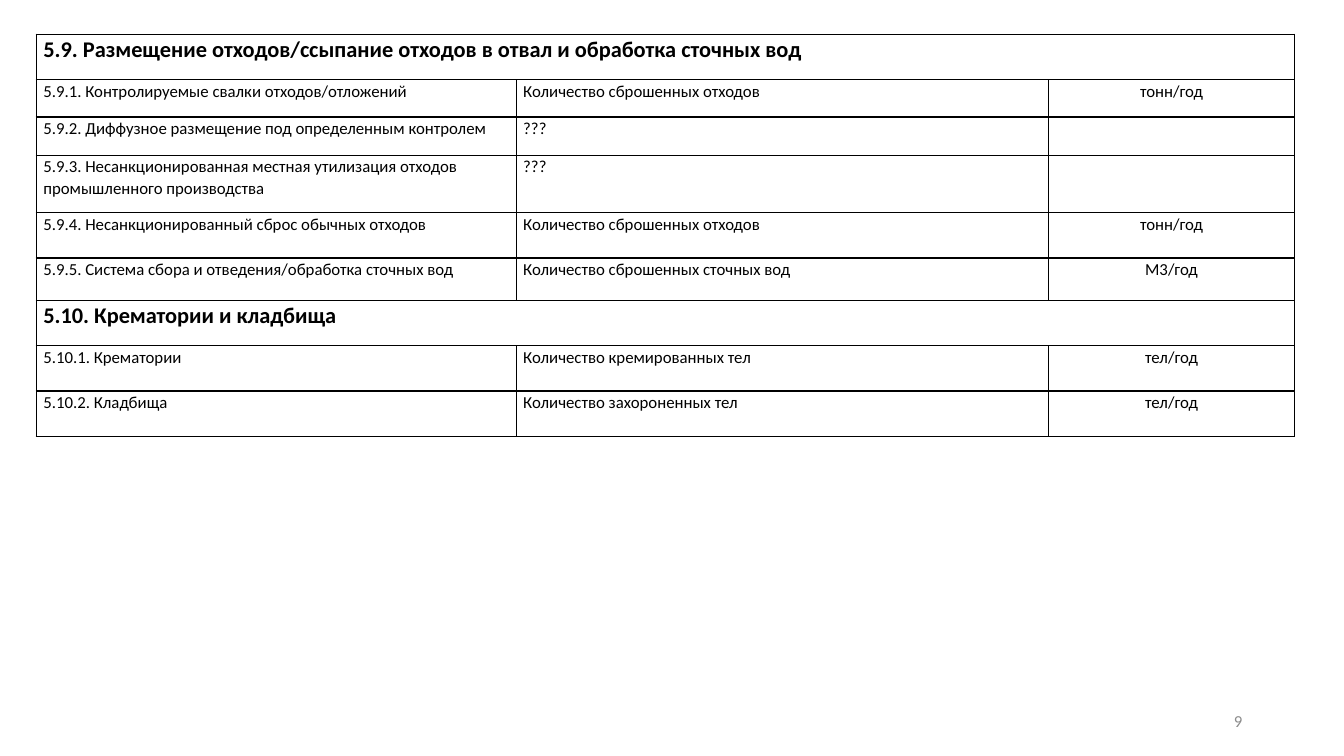
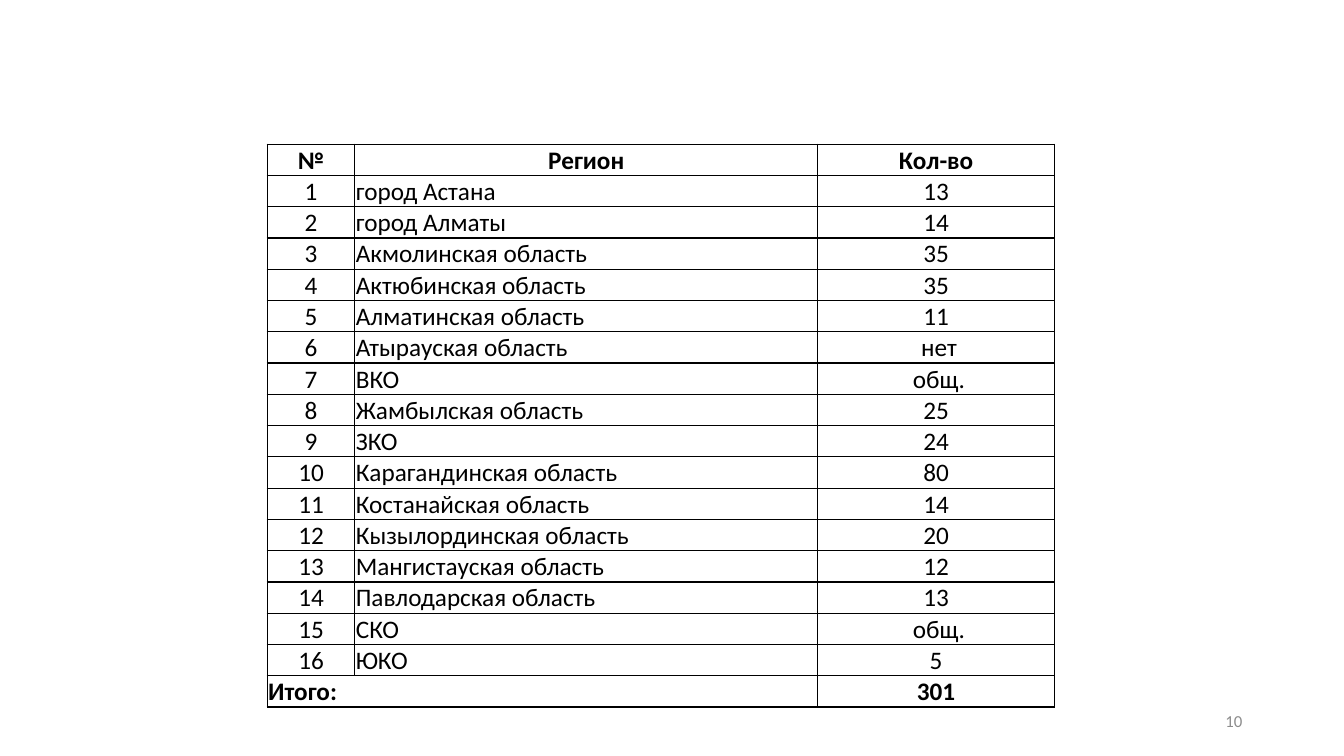
from lxml import etree
from pptx import Presentation
from pptx.dml.color import RGBColor
from pptx.enum.text import MSO_ANCHOR, PP_ALIGN
from pptx.oxml.ns import qn
from pptx.util import Inches, Pt

BLACK = RGBColor(0x00, 0x00, 0x00)
GRAY = RGBColor(0x8C, 0x8C, 0x8C)
FONT = "Calibri"
LEFT, CENTER, RIGHT = PP_ALIGN.LEFT, PP_ALIGN.CENTER, PP_ALIGN.RIGHT
TOP, MIDDLE, BOTTOM = MSO_ANCHOR.TOP, MSO_ANCHOR.MIDDLE, MSO_ANCHOR.BOTTOM
BLANK_LAYOUT = 6

WASTE_ROWS = [
    ("5.9. Размещение отходов/ссыпание отходов в отвал и обработка сточных вод",),
    ("5.9.1. Контролируемые свалки отходов/отложений", "Количество сброшенных отходов", "тонн/год"),
    ("5.9.2. Диффузное размещение под определенным контролем", "???", ""),
    ("5.9.3. Несанкционированная местная утилизация отходов промышленного производства", "???", ""),
    ("5.9.4. Несанкционированный сброс обычных отходов", "Количество сброшенных отходов", "тонн/год"),
    ("5.9.5. Система сбора и отведения/обработка сточных вод", "Количество сброшенных сточных вод", "М3/год"),
    ("5.10. Крематории и кладбища",),
    ("5.10.1. Крематории", "Количество кремированных тел", "тел/год"),
    ("5.10.2. Кладбища", "Количество захороненных тел", "тел/год"),
]
WASTE_HEIGHTS = [0.45, 0.37, 0.38, 0.57, 0.45, 0.42, 0.45, 0.45, 0.45]

REGIONS = [
    ("город Астана", "13"),
    ("город Алматы", "14"),
    ("Акмолинская область", "35"),
    ("Актюбинская область", "35"),
    ("Алматинская область", "11"),
    ("Атырауская область", " нет"),
    ("ВКО", " общ."),
    ("Жамбылская область", "25"),
    ("ЗКО", "24"),
    ("Карагандинская область", "80"),
    ("Костанайская область", "14"),
    ("Кызылординская область", "20"),
    ("Мангистауская область", "12"),
    ("Павлодарская область", "13"),
    ("СКО", " общ."),
    ("ЮКО", "5"),
]
REGION_ROWS = [
    ("№", "Регион", "Кол-во"),
    *((str(number), *region) for number, region in enumerate(REGIONS, 1)),
    ("Итого:", "301"),
]


def apply_format(target, values):
    for name, value in values.items():
        setattr(target, name, value)


class Deck:
    def __init__(self):
        self.presentation = Presentation()
        self.presentation.slide_width = Inches(13.33)
        self.presentation.slide_height = Inches(7.5)
        self.slide = None

    def add_slide(self, number):
        layout = self.presentation.slide_layouts[BLANK_LAYOUT]
        self.slide = self.presentation.slides.add_slide(layout)
        self.add_page_number(number)

    def fill_paragraph(self, paragraph, text, size, color=BLACK, bold=False, **paragraph_format):
        apply_format(paragraph, paragraph_format)
        if text:
            run = paragraph.add_run()
            run.text = text
            apply_format(run.font, {"name": FONT, "size": Pt(size), "bold": bold})
            run.font.color.rgb = color

    def add_page_number(self, number):
        shape = self.slide.shapes.add_textbox(Inches(9.42), Inches(6.95), Inches(3), Inches(0.4))
        frame = shape.text_frame
        apply_format(frame, {"word_wrap": True, "vertical_anchor": MIDDLE})
        self.fill_paragraph(frame.paragraphs[0], str(number), 12, GRAY, alignment=RIGHT)

    def add_borders(self, cell):
        properties = cell._tc.get_or_add_tcPr()
        for side in ("lnL", "lnR", "lnT", "lnB"):
            line = etree.SubElement(properties, qn(f"a:{side}"), w=str(Pt(1)))
            fill = etree.SubElement(line, qn("a:solidFill"))
            etree.SubElement(fill, qn("a:srgbClr"), val=str(BLACK))

    def add_table(self, left, top, widths, heights, rows, columns, margins, size,
                  bold_size, has_header=False, line_spacing=None):
        frame = self.slide.shapes.add_table(
            len(rows), len(widths), Inches(left), Inches(top),
            Inches(sum(widths)), Inches(sum(heights)))
        table = frame.table
        apply_format(table, {"first_row": False, "horz_banding": False})
        for column, width in zip(table.columns, widths):
            column.width = Inches(width)
        for row, height in zip(table.rows, heights):
            row.height = Inches(height)
        for cell in table.iter_cells():
            self.add_borders(cell)
            cell.fill.background()
            apply_format(cell, margins)

        for row_index, texts in enumerate(rows):
            merged = len(widths) - len(texts)
            is_header = has_header and row_index == 0
            if merged:
                table.cell(row_index, 0).merge(table.cell(row_index, merged))
            for text_index, text in enumerate(texts):
                column_index = text_index + merged if text_index else 0
                alignment, anchor = columns[0 if is_header else column_index]
                if merged and text_index == 0:
                    alignment = LEFT
                cell = table.cell(row_index, column_index)
                cell.vertical_anchor = anchor
                bold = bool(merged) or is_header
                self.fill_paragraph(
                    cell.text_frame.paragraphs[0], text, bold_size if bold else size,
                    bold=bold, alignment=alignment, line_spacing=line_spacing)


def main():
    deck = Deck()

    deck.add_slide(9)
    deck.add_table(
        0.36, 0.34, [4.76, 5.28, 2.44], WASTE_HEIGHTS, WASTE_ROWS,
        columns=[(LEFT, TOP), (LEFT, TOP), (CENTER, TOP)],
        margins={"margin_left": Inches(0.07), "margin_right": Inches(0.07),
                 "margin_top": 0, "margin_bottom": 0},
        size=12, bold_size=16, line_spacing=1.07)

    deck.add_slide(10)
    deck.add_table(
        2.65, 1.43, [0.87, 4.59, 2.35], [0.31] * len(REGION_ROWS), REGION_ROWS,
        columns=[(CENTER, BOTTOM), (LEFT, MIDDLE), (CENTER, BOTTOM)],
        margins={"margin_left": Inches(0.01), "margin_right": Inches(0.01),
                 "margin_top": Inches(0.01), "margin_bottom": 0},
        size=18, bold_size=18, has_header=True)

    deck.presentation.save("out.pptx")


if __name__ == "__main__":
    main()
